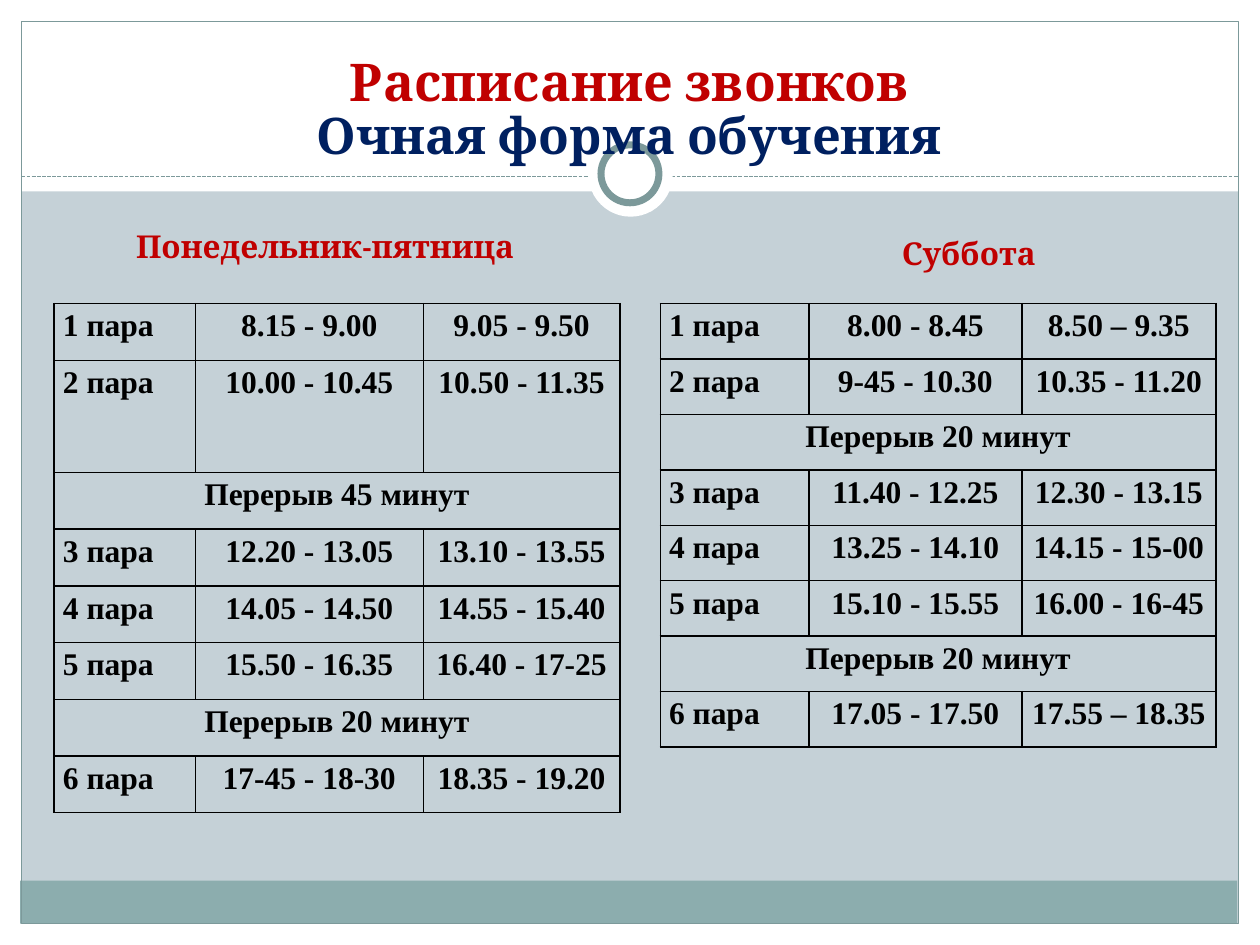
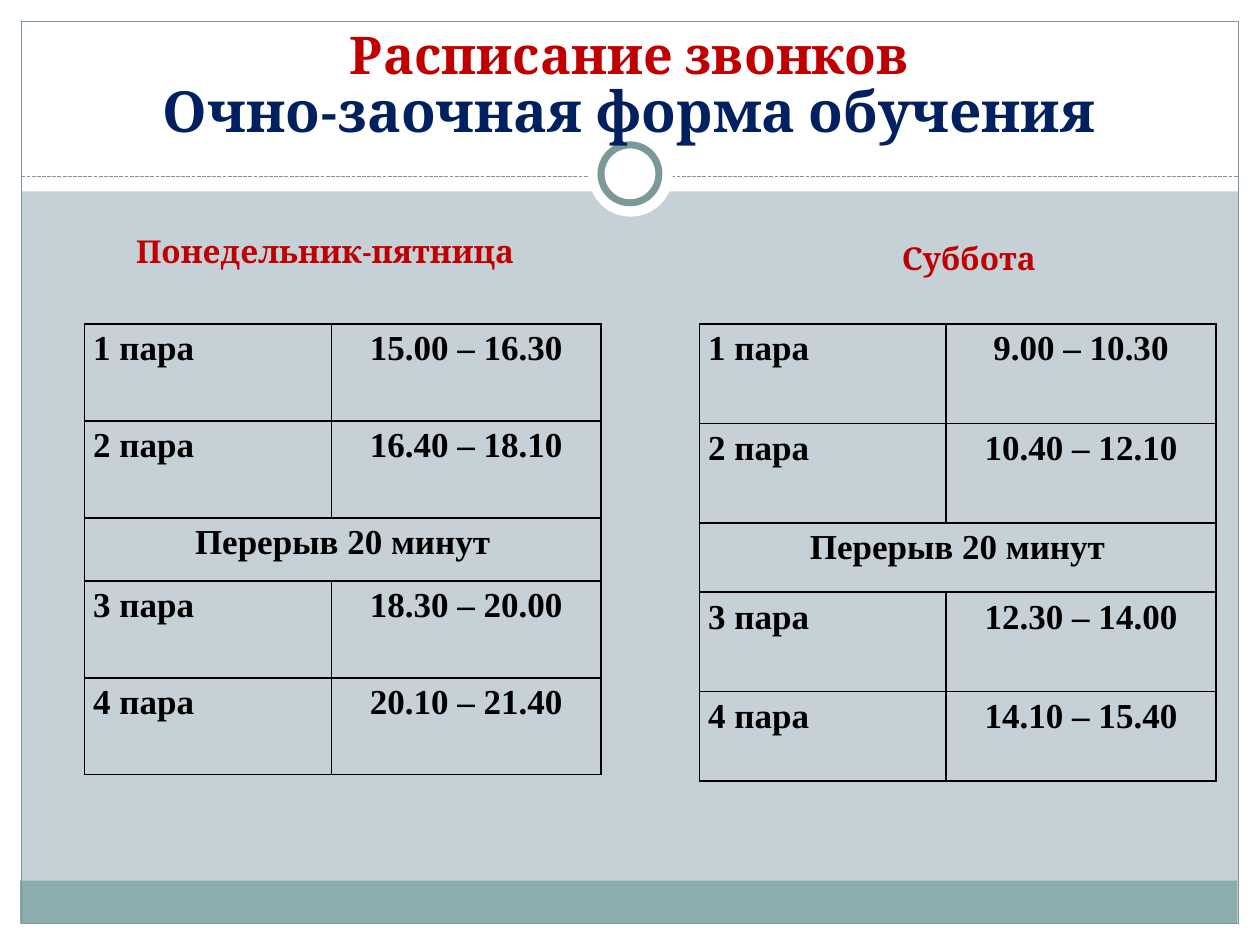
from lxml import etree
from pptx import Presentation
from pptx.dml.color import RGBColor
from pptx.enum.dml import MSO_LINE
from pptx.enum.shapes import MSO_CONNECTOR, MSO_SHAPE
from pptx.enum.text import MSO_ANCHOR, MSO_AUTO_SIZE, PP_ALIGN
from pptx.oxml.ns import qn
from pptx.util import Inches, Pt

COLORS = {
    "background": "C5D1D7",
    "white": "FFFFFF",
    "band": "8CADAE",
    "outline": "7C999A",
    "red": "C00000",
    "navy": "002060",
    "black": "000000",
}
HEADING_FONT = "Cambria"
TABLE_FONT = "Times New Roman"
TITLE_ONLY = 5

FULL_TIME_WEEKDAYS = [
    ("1 пара", "8.15 - 9.00", "9.05 - 9.50"),
    ("2 пара", "10.00 - 10.45", "10.50 - 11.35"),
    ("Перерыв 45 минут",),
    ("3 пара", "12.20 - 13.05", "13.10 - 13.55"),
    ("4 пара", "14.05 - 14.50", "14.55 - 15.40"),
    ("5 пара", "15.50 - 16.35", "16.40 - 17-25"),
    ("Перерыв 20 минут",),
    ("6 пара", "17-45 - 18-30", "18.35 - 19.20"),
]
FULL_TIME_SATURDAY = [
    ("1 пара", "8.00 - 8.45", "8.50 – 9.35"),
    ("2 пара", "9-45 - 10.30", "10.35 - 11.20"),
    ("Перерыв 20 минут",),
    ("3 пара", "11.40 - 12.25", "12.30 - 13.15"),
    ("4 пара", "13.25 - 14.10", "14.15 - 15-00"),
    ("5 пара", "15.10 - 15.55", "16.00 - 16-45"),
    ("Перерыв 20 минут",),
    ("6 пара", "17.05 - 17.50", "17.55 – 18.35"),
]
PART_TIME_WEEKDAYS = [
    ("1 пара", "15.00 – 16.30"),
    ("2 пара", "16.40 – 18.10"),
    ("Перерыв 20 минут",),
    ("3 пара", "18.30 – 20.00"),
    ("4 пара", "20.10 – 21.40"),
]
PART_TIME_SATURDAY = [
    ("1 пара", "9.00 – 10.30"),
    ("2 пара", "10.40 – 12.10"),
    ("Перерыв 20 минут",),
    ("3 пара", "12.30 – 14.00"),
    ("4 пара", "14.10 – 15.40"),
]


def rgb(name):
    return RGBColor.from_string(COLORS[name])


def add_span(para, text, size, color, font=HEADING_FONT):
    span = para.add_run()
    span.text = text
    span.font.size = Pt(size)
    span.font.name = font
    span.font.bold = True
    span.font.color.rgb = rgb(color)


def clear_margins(frame):
    frame.margin_left = frame.margin_right = 0
    frame.margin_top = frame.margin_bottom = 0


def add_figure(page, kind, left, top, width, height, fill=None, line_width=0):
    figure = page.shapes.add_shape(
        kind, Inches(left), Inches(top), Inches(width), Inches(height))
    figure.shadow.inherit = False
    if fill:
        figure.fill.solid()
        figure.fill.fore_color.rgb = rgb(fill)
    else:
        figure.fill.background()
    if line_width:
        figure.line.color.rgb = rgb("outline")
        figure.line.width = Pt(line_width)
    else:
        figure.line.fill.background()


def add_dashed_rule(page, left, right, y):
    rule = page.shapes.add_connector(
        MSO_CONNECTOR.STRAIGHT, Inches(left), Inches(y), Inches(right), Inches(y))
    rule.line.color.rgb = rgb("outline")
    rule.line.width = Pt(0.75)
    rule.line.dash_style = MSO_LINE.SQUARE_DOT
    etree.SubElement(rule.element.spPr, qn("a:effectLst"))


def add_decor(page):
    """Draw the white margins, the bottom band, the frame and the ring."""
    margins = [(0, 7.33, 10, 0.17), (0, 0, 10, 1.52),
               (0, 0, 0.17, 7.5), (9.83, 0, 0.17, 7.5)]
    for margin in margins:
        add_figure(page, MSO_SHAPE.RECTANGLE, *margin, fill="white")
    add_figure(page, MSO_SHAPE.RECTANGLE, 0.16, 6.99, 9.66, 0.34, fill="band")
    add_figure(page, MSO_SHAPE.RECTANGLE, 0.17, 0.17, 9.66, 7.16, line_width=0.75)
    add_dashed_rule(page, 0.17, 9.83, 1.4)
    add_figure(page, MSO_SHAPE.OVAL, 4.67, 1.05, 0.67, 0.67, fill="white")
    add_figure(page, MSO_SHAPE.OVAL, 4.77, 1.15, 0.46, 0.46, fill="white", line_width=4)


def set_title(page, form, form_size, top):
    title = page.shapes.title
    title.left, title.top = Inches(0.33), Inches(top)
    title.width, title.height = Inches(9.33), Inches(0.83)
    frame = title.text_frame
    frame.auto_size = MSO_AUTO_SIZE.NONE
    frame.vertical_anchor = MSO_ANCHOR.BOTTOM
    clear_margins(frame)
    para = frame.paragraphs[0]
    para.alignment = PP_ALIGN.CENTER
    para.line_spacing = 0.87
    add_span(para, "Расписание звонков", 29.7, "red")
    para.add_line_break()
    add_span(para, form, form_size, "navy")
    # The title lies over the ring
    title.element.getparent().append(title.element)


def add_day_heading(page, text, left, top, width, align=PP_ALIGN.LEFT,
                    indent=0, drop=0):
    box = page.shapes.add_textbox(
        Inches(left), Inches(top), Inches(width), Inches(0.9))
    frame = box.text_frame
    frame.word_wrap = True
    clear_margins(frame)
    frame.margin_left = Inches(indent)
    frame.margin_top = Inches(drop)
    para = frame.paragraphs[0]
    para.alignment = align
    add_span(para, text, 18, "red")


def add_day_headings(page, top):
    add_day_heading(page, "Понедельник-пятница", 0.33, top, 5.38,
                    indent=0.75, drop=0.37)
    add_day_heading(page, "Суббота", 5.63, top + 0.08, 4.12,
                    align=PP_ALIGN.CENTER, drop=0.31)


def set_borders(cell):
    properties = cell._tc.get_or_add_tcPr()
    for side in ("lnL", "lnR", "lnT", "lnB"):
        line = etree.SubElement(properties, qn(f"a:{side}"), w=str(Pt(1)))
        fill = etree.SubElement(line, qn("a:solidFill"))
        etree.SubElement(fill, qn("a:srgbClr"), val=COLORS["black"])


def fill_cell(cell, text, size, align):
    clear_margins(cell)
    cell.margin_left = cell.margin_right = Inches(0.07)
    para = cell.text_frame.paragraphs[0]
    para.alignment = align
    para.line_spacing = 1.15
    add_span(para, text, size, "black", font=TABLE_FONT)


def add_timetable(page, lessons, left, top, widths, heights, size):
    """Add a table in which a one-item row is a break across all columns."""
    table = page.shapes.add_table(
        len(lessons), len(widths), Inches(left), Inches(top),
        Inches(sum(widths)), Inches(sum(heights))).table
    table.first_row = table.horz_banding = False
    for column, width in zip(table.columns, widths):
        column.width = Inches(width)
    for row, height in zip(table.rows, heights):
        row.height = Inches(height)
    for cell in table.iter_cells():
        set_borders(cell)
        cell.fill.background()
    for row_number, lesson in enumerate(lessons):
        is_break = len(lesson) == 1
        if is_break:
            table.cell(row_number, 0).merge(table.cell(row_number, len(widths) - 1))
        for column_number, text in enumerate(lesson):
            centered = is_break or column_number > 0
            fill_cell(table.cell(row_number, column_number), text, size,
                      PP_ALIGN.CENTER if centered else PP_ALIGN.LEFT)


def add_page(deck, form, form_size, title_top, headings_top):
    page = deck.slides.add_slide(deck.slide_layouts[TITLE_ONLY])
    add_decor(page)
    set_title(page, form, form_size, title_top)
    add_day_headings(page, headings_top)
    return page


def main():
    deck = Presentation()
    deck.slide_width, deck.slide_height = Inches(10), Inches(7.5)
    backdrop = deck.slide_master.background.fill
    backdrop.solid()
    backdrop.fore_color.rgb = rgb("background")

    full_time = add_page(deck, "Очная форма обучения", 28.8, 0.48, 1.47)
    add_timetable(full_time, FULL_TIME_WEEKDAYS, 0.43, 2.41,
                  [1.12, 1.81, 1.56], [0.45, 0.89] + [0.45] * 6, 18)
    add_timetable(full_time, FULL_TIME_SATURDAY, 5.24, 2.41,
                  [1.18, 1.69, 1.54], [0.44] * 8, 18)

    part_time = add_page(deck, "Очно-заочная форма обучения", 32.4, 0.32, 1.51)
    add_timetable(part_time, PART_TIME_WEEKDAYS, 0.67, 2.57,
                  [1.96, 2.14], [0.77, 0.77, 0.5, 0.77, 0.77], 20)
    add_timetable(part_time, PART_TIME_SATURDAY, 5.55, 2.57,
                  [1.96, 2.14], [0.79, 0.79, 0.55, 0.79, 0.71], 20)

    deck.save("out.pptx")


if __name__ == "__main__":
    main()
